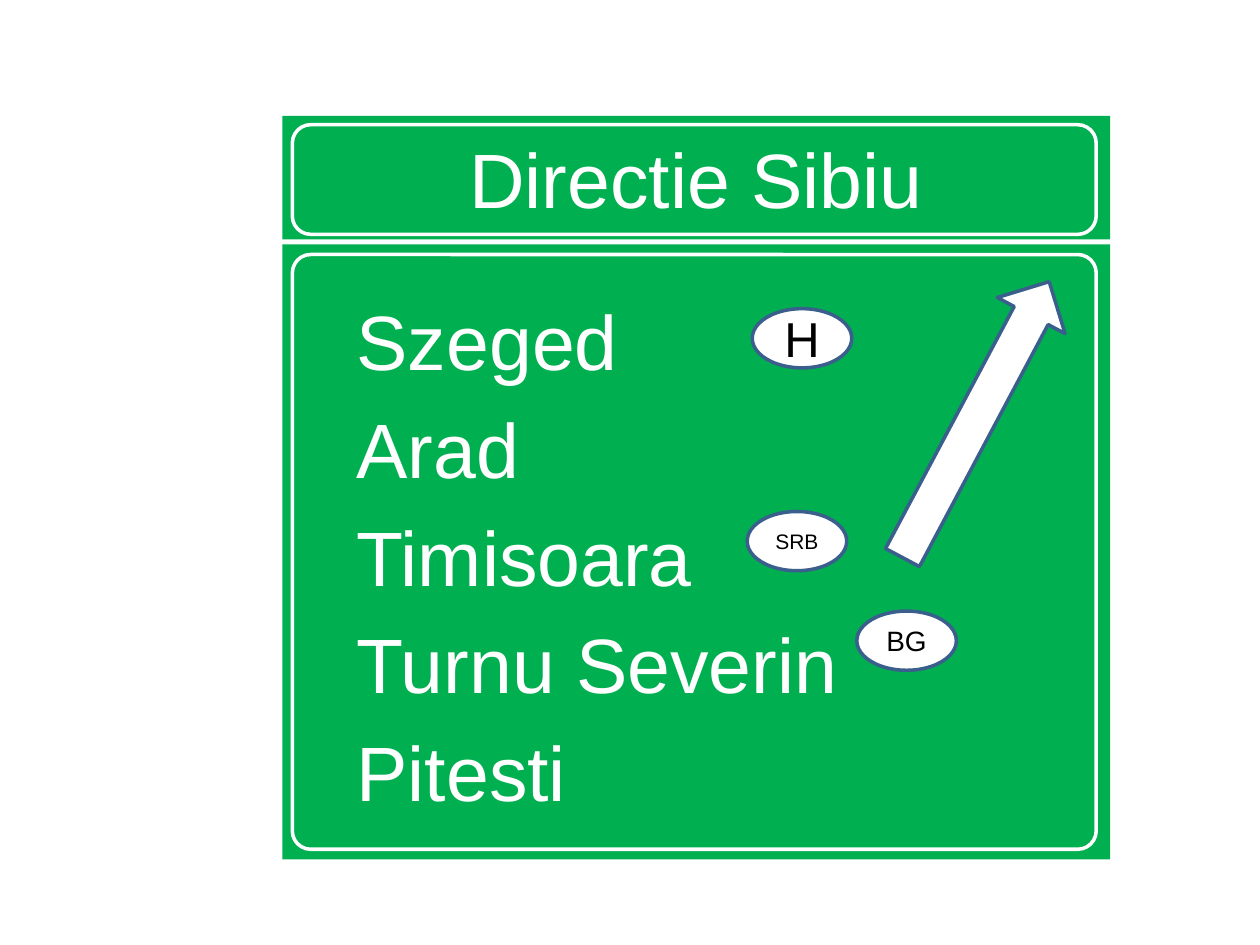
from lxml import etree
from pptx import Presentation
from pptx import util as u
from pptx.dml.color import RGBColor
from pptx.enum import shapes, text
from pptx.oxml.ns import qn

COLORS = {"sign": "00B050", "white": "FFFFFF", "outline": "3A5F8C", "black": "000000"}
FONT = "Arial"
TITLE = "Directie Sibiu"
CITIES = ["Szeged", "Arad", "Timisoara", "Turnu Severin", "Pitesti"]
BADGES = [("SRB", 5.93, 4.06, 12), ("H", 5.97, 2.45, 28), ("BG", 6.8, 4.85, 16)]
TITLE_BOX = (2.24, 0.92, 6.57, 0.98)
BODY_BOX = (2.24, 1.94, 6.57, 4.88)
ARROW_BOX = (7.44, 2.09, 0.61, 2.48)
BADGE_SIZE = (0.79, 0.47)
CORNER = 0.146


def color(name):
    """Return the named palette colour."""
    return RGBColor.from_string(COLORS[name])


def apply(target, values):
    """Set each attribute of target from a dict."""
    for name, value in values.items():
        setattr(target, name, value)


def place(shape, box):
    """Move and size a shape to a box given in inches."""
    apply(shape, dict(zip(("left", "top", "width", "height"), map(u.Inches, box))))


def paint(shape, fill):
    """Fill a shape with a palette colour."""
    shape.fill.solid()
    shape.fill.fore_color.rgb = color(fill)


def write(paragraph, words, size, font_color):
    """Put one formatted run in a paragraph."""
    run = paragraph.add_run()
    run.text = words
    apply(run.font, {"name": FONT, "size": u.Pt(size)})
    run.font.color.rgb = color(font_color)


def add_outlined(slide, kind, box, line, fill=None):
    """Add a preset shape with a two point outline."""
    shape = slide.shapes.add_shape(kind, *map(u.Inches, box))
    shape.shadow.inherit = False
    if fill:
        paint(shape, fill)
    else:
        shape.fill.background()
    shape.line.color.rgb = color(line)
    shape.line.width = u.Pt(2)
    return shape


def fill_title(placeholder, box):
    """Format the title panel of the sign."""
    place(placeholder, box)
    paint(placeholder, "sign")
    frame = placeholder.text_frame
    apply(frame, {"auto_size": text.MSO_AUTO_SIZE.NONE,
                  "vertical_anchor": text.MSO_ANCHOR.MIDDLE})
    frame.paragraphs[0].alignment = text.PP_ALIGN.CENTER
    write(frame.paragraphs[0], TITLE, 44, "white")


def fill_cities(placeholder, box):
    """Format the panel that lists the cities."""
    place(placeholder, box)
    paint(placeholder, "sign")
    frame = placeholder.text_frame
    apply(frame, {"auto_size": text.MSO_AUTO_SIZE.NONE,
                  "margin_left": u.Inches(0.59), "margin_top": u.Inches(0.39),
                  "margin_right": u.Inches(0.08), "margin_bottom": u.Inches(0.05)})
    for index, city in enumerate(CITIES):
        paragraph = frame.add_paragraph() if index else frame.paragraphs[0]
        properties = paragraph._p.get_or_add_pPr()
        properties.set("marL", "0")
        properties.set("indent", "0")
        etree.SubElement(properties, qn("a:buNone"))
        write(paragraph, city, 44, "white")


def add_border(slide, box):
    """Draw the rounded white border inside a panel."""
    left, top, width, height = box
    inner = (left + 0.08, top + 0.08, width - 0.19, height - 0.13)
    if height > 1:
        inner = inner[:3] + (height - 0.16,)
    else:
        inner = (inner[0], top + 0.07, inner[2], height - 0.11)
    border = add_outlined(slide, shapes.MSO_SHAPE.ROUNDED_RECTANGLE, inner, "white")
    border.adjustments[0] = CORNER / inner[3]


def add_arrow(slide, box):
    """Add the slanted direction arrow."""
    arrow = add_outlined(slide, shapes.MSO_SHAPE.UP_ARROW, box, "outline", "white")
    arrow.rotation = 28


def add_badge(slide, box, label, size):
    """Add an oval country badge."""
    badge = add_outlined(slide, shapes.MSO_SHAPE.OVAL, box, "outline", "white")
    frame = badge.text_frame
    apply(frame, {"word_wrap": False, "vertical_anchor": text.MSO_ANCHOR.MIDDLE})
    frame.paragraphs[0].alignment = text.PP_ALIGN.CENTER
    write(frame.paragraphs[0], label, size, "black")


def main():
    """Build the road sign slide."""
    presentation = Presentation()
    apply(presentation, {"slide_width": u.Inches(10), "slide_height": u.Inches(7.5)})
    slide = presentation.slides.add_slide(presentation.slide_layouts[1])
    fill_title(slide.shapes.title, TITLE_BOX)
    fill_cities(slide.placeholders[1], BODY_BOX)
    add_arrow(slide, ARROW_BOX)
    for label, left, top, size in BADGES:
        add_badge(slide, (left, top, *BADGE_SIZE), label, size)
    for box in (TITLE_BOX, BODY_BOX):
        add_border(slide, box)
    presentation.save("out.pptx")


if __name__ == "__main__":
    main()
